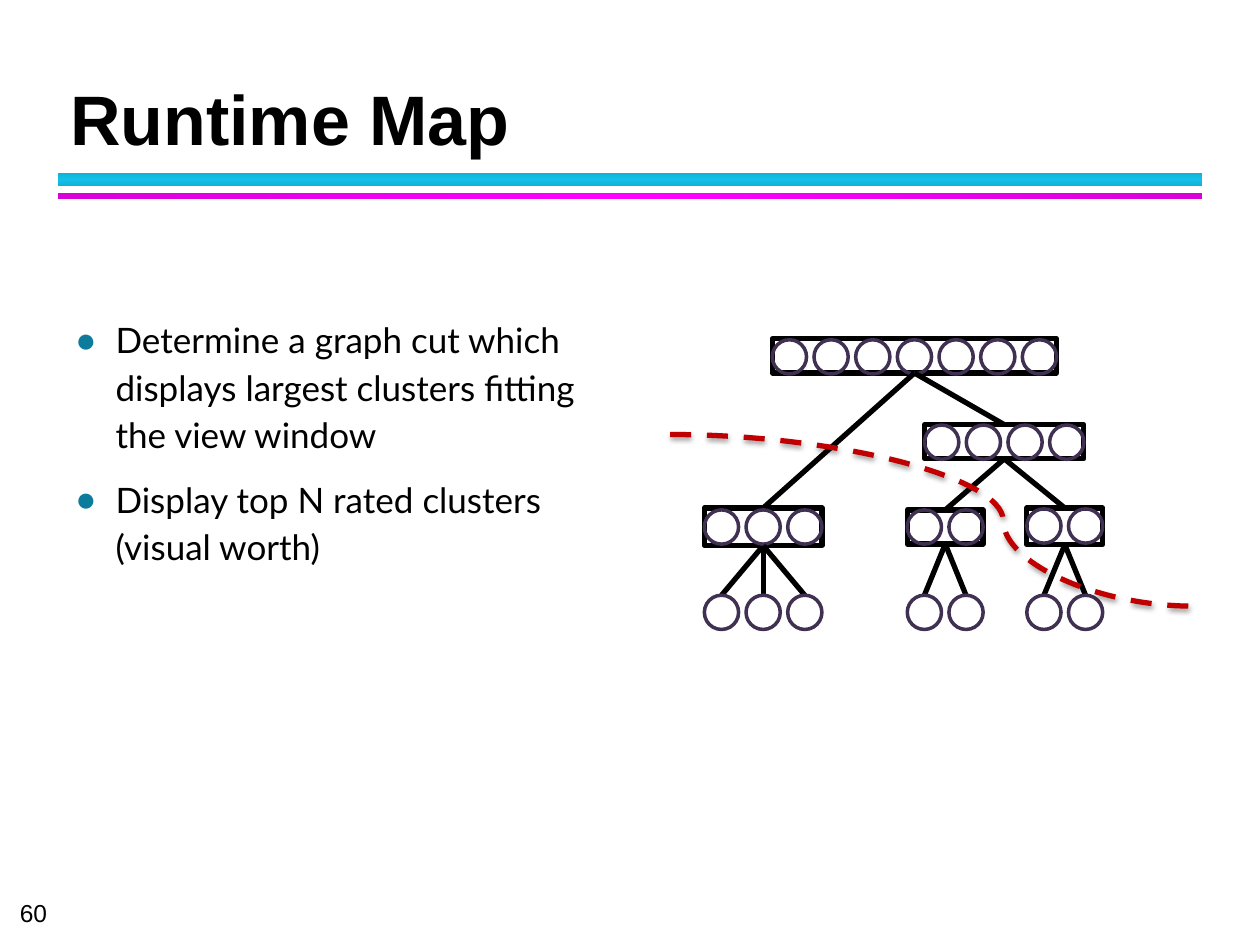
import lxml.etree
import pptx
import pptx.dml.color
import pptx.enum.dml
import pptx.enum.shapes
import pptx.enum.text
import pptx.oxml
import pptx.oxml.ns
import pptx.util

Cm = pptx.util.Cm
Pt = pptx.util.Pt
RGBColor = pptx.dml.color.RGBColor
CONNECTOR = pptx.enum.shapes.MSO_CONNECTOR
SHAPE = pptx.enum.shapes.MSO_SHAPE
ANCHOR = pptx.enum.text.MSO_ANCHOR
NAMESPACE = pptx.oxml.ns.nsdecls("a")

BLACK = RGBColor(0x00, 0x00, 0x00)
WHITE = RGBColor(0xFF, 0xFF, 0xFF)
PURPLE = RGBColor(0x40, 0x31, 0x52)
RED = RGBColor(0xC0, 0x00, 0x00)
TEAL = RGBColor(0x0C, 0x7B, 0x9C)
CYAN = RGBColor(0x12, 0xC2, 0xE9)
DARK_CYAN = RGBColor(0x10, 0xB0, 0xD3)
MAGENTA = RGBColor(0xFF, 0x00, 0xFF)
DARK_MAGENTA = RGBColor(0xDA, 0x00, 0xDA)

presentation = pptx.Presentation()
presentation.slide_width = Cm(25.4)
presentation.slide_height = Cm(19.05)
slide = presentation.slides.add_slide(presentation.slide_layouts[6])
shapes = slide.shapes


def add_outline(kind, left, top, width, height, color, weight):
    """Add an unfilled shape; lengths are in centimetres, weight in points."""
    shape = shapes.add_shape(kind, Cm(left), Cm(top), Cm(width), Cm(height))
    shape.shadow.inherit = False
    shape.fill.background()
    shape.line.color.rgb = color
    shape.line.width = Pt(weight)
    return shape


def add_link(kind, start, end, color):
    """Add a connector without shadow between two points in centimetres."""
    link = shapes.add_connector(kind, *(Cm(value) for value in start + end))
    link.line.color.rgb = color
    link.line.width = Pt(3)
    lxml.etree.SubElement(link._element.spPr, pptx.oxml.ns.qn("a:effectLst"))
    return link


# Page number
number_box = shapes.add_textbox(Cm(0.4), Cm(18.11), Cm(0.8), Cm(0.58))
frame = number_box.text_frame
frame.margin_left = frame.margin_right = frame.margin_top = frame.margin_bottom = 0
frame.vertical_anchor = ANCHOR.BOTTOM
run = frame.paragraphs[0].add_run()
run.text = "60"
run.font.size = Pt(14)
run.font.name = "Arial"
run.font.color.rgb = BLACK

# Two gradient bars under the title
for top, height, edge, middle, angle in (
    (3.48, 0.28, DARK_CYAN, CYAN, 90),
    (3.89, 0.13, DARK_MAGENTA, MAGENTA, 0),
):
    bar = shapes.add_shape(SHAPE.RECTANGLE, Cm(1.17), Cm(top), Cm(23.06), Cm(height))
    bar.shadow.inherit = False
    bar.line.fill.background()
    stops = "".join(
        f'<a:gs pos="{position}"><a:srgbClr val="{color}"/></a:gs>'
        for position, color in ((0, edge), (50000, middle), (100000, edge))
    )
    bar._element.spPr.find(pptx.oxml.ns.qn("a:prstGeom")).addnext(
        pptx.oxml.parse_xml(
            f'<a:gradFill {NAMESPACE} rotWithShape="1"><a:gsLst>{stops}</a:gsLst>'
            f'<a:lin ang="{angle * 60000}" scaled="0"/></a:gradFill>'
        )
    )

# Title
title_box = shapes.add_textbox(Cm(1.17), Cm(0.84), Cm(23.01), Cm(2.51))
frame = title_box.text_frame
frame.word_wrap = True
frame.vertical_anchor = ANCHOR.BOTTOM
paragraph = frame.paragraphs[0]
paragraph.line_spacing = Pt(36)
run = paragraph.add_run()
run.text = "Runtime Map"
run.font.size = Pt(40)
run.font.bold = True
run.font.name = "Arial"
run.font.color.rgb = BLACK

# Bullets
body_box = shapes.add_textbox(Cm(1.27), Cm(6.2), Cm(10.77), Cm(10.92))
frame = body_box.text_frame
frame.word_wrap = True
for index, text in enumerate((
    "Determine a graph cut which displays largest clusters fitting the view window",
    "Display top N rated clusters (visual worth)",
)):
    paragraph = frame.add_paragraph() if index else frame.paragraphs[0]
    paragraph.line_spacing = Pt(27)
    paragraph.space_before = Pt(6 if index else 0)
    paragraph.space_after = Pt(4)
    properties = paragraph._p.get_or_add_pPr()
    properties.set("marL", str(Cm(0.81)))
    properties.set("indent", str(Cm(-0.81)))
    for bullet in (
        f'<a:buClr {NAMESPACE}><a:srgbClr val="{TEAL}"/></a:buClr>',
        f'<a:buFont {NAMESPACE} typeface="Arial"/>',
        f'<a:buChar {NAMESPACE} char="●"/>',
    ):
        properties.append(pptx.oxml.parse_xml(bullet))
    run = paragraph.add_run()
    run.text = text
    run.font.size = Pt(20)
    run.font.name = "Lato"
    run.font.color.rgb = BLACK

# Cluster tree: left, box top, box height, circle top, circle count, parent
DIAMETER = 0.69
PITCH = 0.84
LEAF_TOP = 12.0
clusters = {
    "root": (15.57, 6.83, 0.69, 6.85, 7, None),
    "inner": (18.64, 8.56, 0.69, 8.57, 4, "root"),
    "left": (14.2, 10.24, 0.76, 10.28, 3, "root"),
    "middle": (18.29, 10.28, 0.69, 10.28, 2, "inner"),
    "right": (20.7, 10.24, 0.74, 10.26, 2, "inner"),
}
parents = {cluster[-1] for cluster in clusters.values()}
bottoms = {}
for name, (left, top, height, circle_top, count, parent) in clusters.items():
    width = PITCH * (count - 1) + DIAMETER
    center = left + width / 2
    bottoms[name] = (center, top + height)
    if parent:
        add_link(CONNECTOR.STRAIGHT, bottoms[parent], (center, top), BLACK)
    add_outline(SHAPE.RECTANGLE, left, top, width, height, BLACK, 3)
    for index in range(count):
        circle_left = left + index * PITCH
        add_outline(SHAPE.OVAL, circle_left, circle_top, DIAMETER, DIAMETER, PURPLE, 2)
        if name not in parents:
            leaf_center = circle_left + DIAMETER / 2
            add_link(CONNECTOR.STRAIGHT, bottoms[name], (leaf_center, LEAF_TOP), BLACK)
            leaf = add_outline(
                SHAPE.OVAL, circle_left, LEAF_TOP, DIAMETER, DIAMETER, PURPLE, 2
            )
            leaf.fill.solid()
            leaf.fill.fore_color.rgb = WHITE

# Dashed cut through the tree, with a soft shadow
cut = add_link(CONNECTOR.CURVE, (13.51, 8.76), (24.05, 12.22), RED)
cut.line.dash_style = pptx.enum.dml.MSO_LINE.DASH
cut_properties = cut._element.spPr
guides = cut_properties.find(pptx.oxml.ns.qn("a:prstGeom")).get_or_add_avLst()
guides.append(
    pptx.oxml.parse_xml(f'<a:gd {NAMESPACE} name="adj1" fmla="val 63700"/>')
)
cut_properties.find(pptx.oxml.ns.qn("a:effectLst")).append(
    pptx.oxml.parse_xml(
        f'<a:outerShdw {NAMESPACE} blurRad="{Pt(3.1)}" dist="{Pt(1.6)}" dir="5400000"'
        ' rotWithShape="0"><a:srgbClr val="000000"><a:alpha val="38000"/></a:srgbClr>'
        "</a:outerShdw>"
    )
)

presentation.save("out.pptx")
